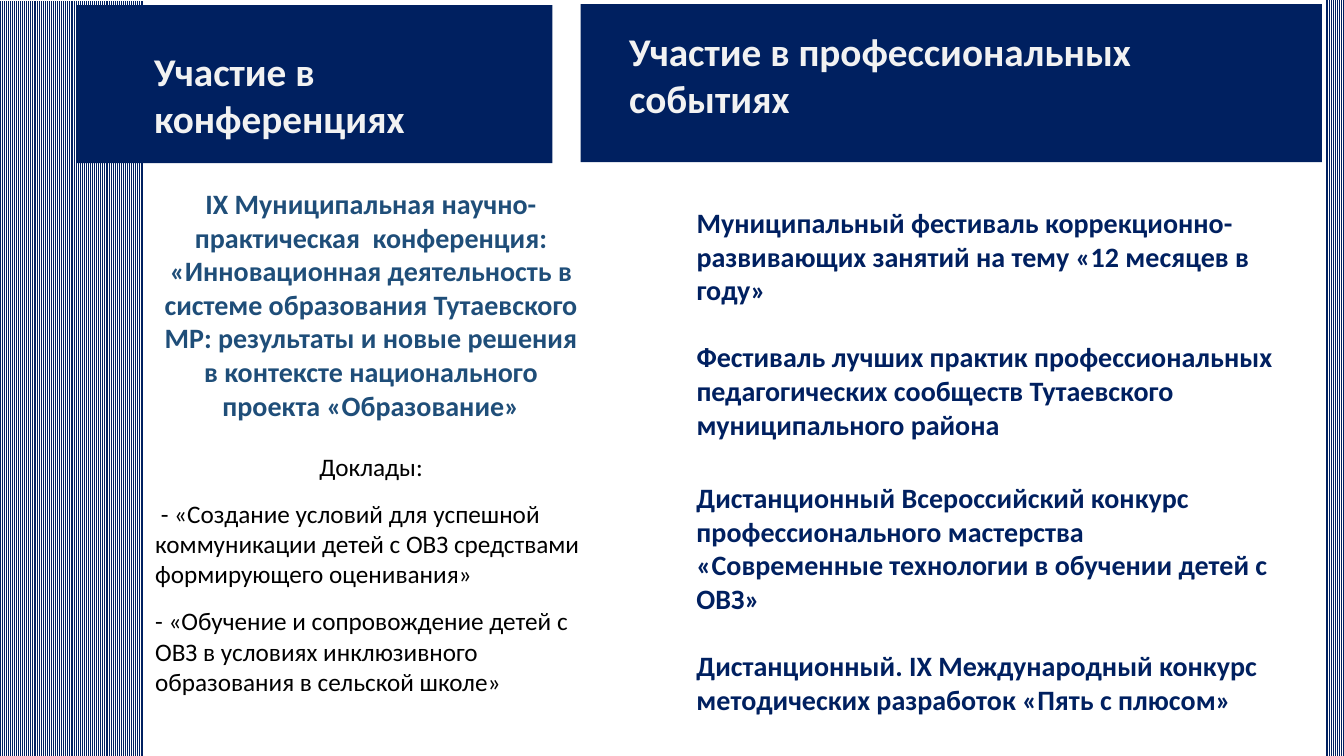
from dataclasses import dataclass
from pptx import Presentation
from pptx.dml.color import RGBColor as Rgb
from pptx.enum.dml import MSO_PATTERN as Pat
from pptx.enum.shapes import MSO_SHAPE as Geo
from pptx.enum.text import MSO_ANCHOR as Anchor, PP_ALIGN as Align
from pptx.util import Inches, Pt


@dataclass(frozen=True)
class Theme:
    font: str = "Calibri"
    navy: str = "002060"
    blue: str = "1F4E79"
    pale: str = "F2F2F2"
    white: str = "FFFFFF"
    black: str = "000000"
    title: int = 28
    item: int = 20
    body: int = 18


class Board:
    def __init__(self, slide, theme):
        self.slide = slide
        self.theme = theme

    def rect(self, *box):
        shape = self.slide.shapes.add_shape(Geo.RECTANGLE, *map(Inches, box))
        shape.shadow.inherit = False
        shape.line.fill.background()
        return shape

    def panel(self, *box):
        fill = self.rect(*box).fill
        fill.solid()
        fill.fore_color.rgb = Rgb.from_string(self.theme.navy)

    def stripes(self, *box):
        fill = self.rect(*box).fill
        fill.patterned()
        fill.pattern = Pat.LIGHT_VERTICAL
        fill.fore_color.rgb = Rgb.from_string(self.theme.navy)
        fill.back_color.rgb = Rgb.from_string(self.theme.white)

    def text(self, box, *paras):
        """Each paragraph is (words, size, colour, bold, align, space before)."""
        frame = self.slide.shapes.add_textbox(*map(Inches, box)).text_frame
        frame.word_wrap = True
        frame.vertical_anchor = Anchor.TOP
        for i, (words, size, tint, bold, align, gap) in enumerate(paras):
            para = frame.add_paragraph() if i else frame.paragraphs[0]
            para.text = words
            para.alignment = align
            para.space_before = Pt(gap)
            font = para.font
            font.name, font.size, font.bold = self.theme.font, Pt(size), bold
            font.color.rgb = Rgb.from_string(tint)

    def title(self, box, words):
        look = self.theme
        self.text(box, (words, look.title, look.pale, True, Align.LEFT, 0))

    def events(self, box, first, *rest):
        look = self.theme
        style = look.item, look.navy, True, Align.LEFT
        self.text(box, (first, *style, 0), *((words, *style, 24) for words in rest))

    def talks(self, box, name, label, *talks):
        look = self.theme
        style = look.body, look.black, False
        self.text(
            box,
            (name, look.item, look.blue, True, Align.CENTER, 0),
            (label, *style, Align.CENTER, 21),
            *((talk, *style, Align.LEFT, 12) for talk in talks),
        )


def main():
    deck = Presentation()
    deck.slide_width, deck.slide_height = Inches(13.33), Inches(7.5)
    board = Board(deck.slides.add_slide(deck.slide_layouts[6]), Theme())

    board.stripes(13.13, -0.03, 0.26, 7.53)
    board.stripes(-0.07, 0.01, 1.49, 7.53)
    board.panel(5.76, 0.04, 7.35, 1.57)
    board.panel(0.76, 0.05, 4.72, 1.57)
    board.title((6.14, 0.22, 6.72, 0.77), "Участие в профессиональных событиях")
    board.title((1.43, 0.42, 4.06, 0.77), "Участие в конференциях")
    board.talks(
        (1.44, 1.8, 4.48, 5.22),
        "IX Муниципальная научно-практическая  конференция: «Инновационная "
        "деятельность в системе образования Тутаевского МР: результаты и новые "
        "решения в контексте национального проекта «Образование»",
        "Доклады:",
        " - «Создание условий для успешной коммуникации детей с ОВЗ средствами "
        "формирующего оценивания»",
        "- «Обучение и сопровождение детей с ОВЗ в условиях инклюзивного "
        "образования в сельской школе»",
    )
    board.events(
        (6.81, 1.99, 6.08, 2.46),
        "Муниципальный фестиваль коррекционно-развивающих занятий на тему "
        "«12 месяцев в году»",
        "Фестиваль лучших практик профессиональных педагогических сообществ "
        "Тутаевского муниципального района",
    )
    board.events(
        (6.81, 4.72, 5.93, 2.79),
        "Дистанционный Всероссийский конкурс профессионального мастерства "
        "«Современные технологии в обучении детей с ОВЗ»",
        "Дистанционный. IX Международный конкурс методических разработок "
        "«Пять с плюсом»",
    )
    deck.save("out.pptx")


if __name__ == "__main__":
    main()
